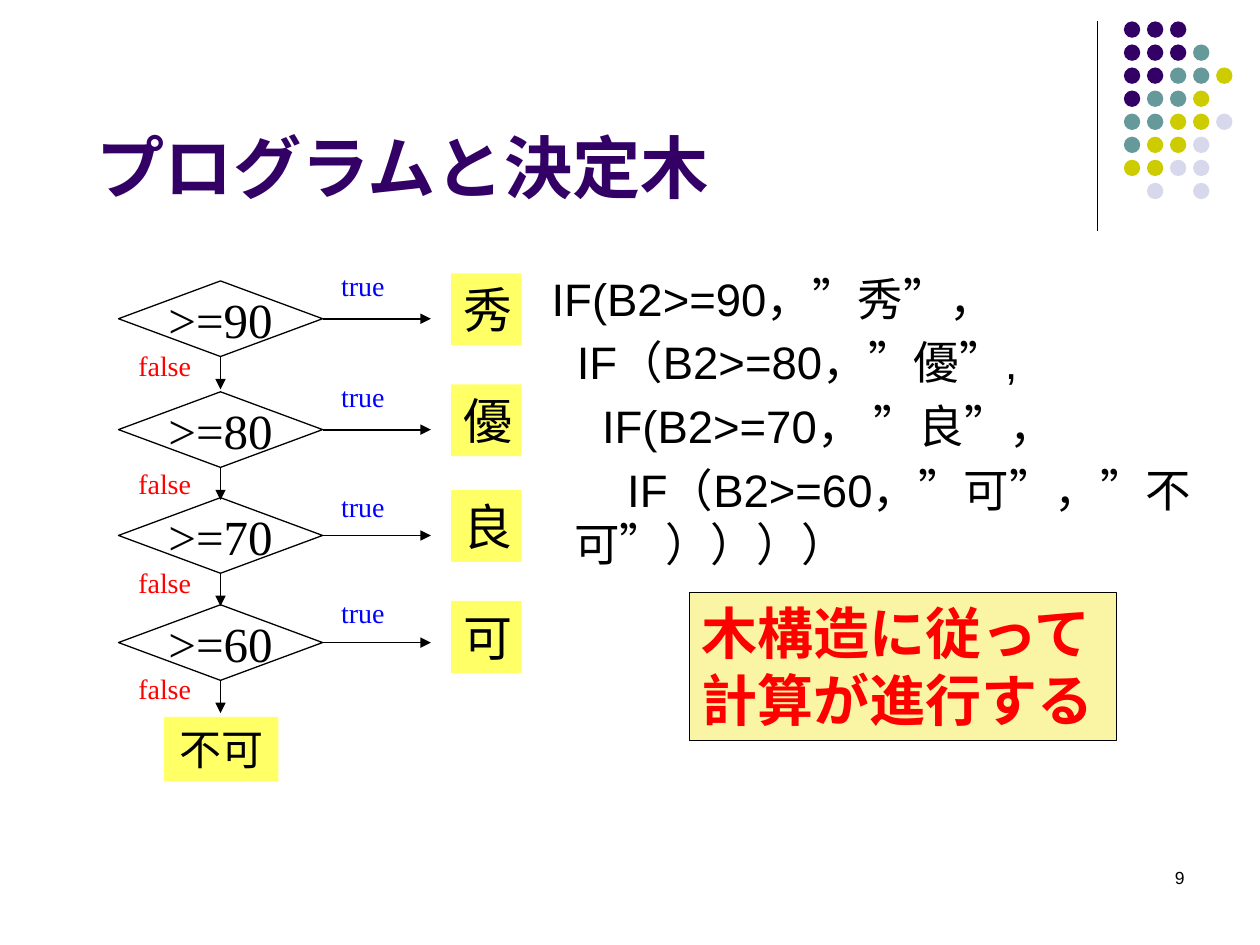
"""Build a slide that sets a grading decision tree beside its nested IF formula."""
from lxml.etree import SubElement
from pptx import Presentation
from pptx.dml.color import RGBColor
from pptx.enum.shapes import MSO_CONNECTOR, MSO_SHAPE as Shape
from pptx.enum.text import MSO_ANCHOR as Anchor, PP_ALIGN as Align
from pptx.oxml.ns import qn
from pptx.util import Inches, Pt

BLACK = RGBColor(0x00, 0x00, 0x00)
RED = RGBColor(0xFF, 0x00, 0x00)
BLUE = RGBColor(0x00, 0x00, 0xFF)
PURPLE = RGBColor(0x33, 0x00, 0x66)
TEAL = RGBColor(0x66, 0x99, 0x99)
OLIVE = RGBColor(0xCC, 0xCC, 0x00)
LAVENDER = RGBColor(0xD8, 0xD8, 0xEC)
YELLOW = RGBColor(0xFF, 0xFF, 0x66)
CREAM = RGBColor(0xF9, 0xF5, 0xA5)

deck = Presentation()
deck.slide_width, deck.slide_height = Inches(10), Inches(7.5)
page = deck.slides.add_slide(deck.slide_layouts[6])


def add_box(text, left, top, width, height, kind=None, fill=None, line=None,
            size=28, font="Times New Roman", color=BLACK, bold=False,
            align=Align.LEFT, anchor=Anchor.TOP, wrap=True, indents=(0,),
            hang=0, before=0):
    area = [Inches(length) for length in (left, top, width, height)]
    if kind is None:
        box = page.shapes.add_textbox(*area)
    else:
        box = page.shapes.add_shape(kind, *area)
        box.shadow.inherit = False
        if fill is None:
            box.fill.background()
        else:
            box.fill.solid()
            box.fill.fore_color.rgb = fill
        if line is None:
            box.line.fill.background()
        else:
            box.line.color.rgb = line
            box.line.width = Pt(0.75)
    if not text:
        return
    frame = box.text_frame
    frame.word_wrap = wrap
    frame.vertical_anchor = anchor
    for index, words in enumerate(text.split("\n")):
        para = frame.paragraphs[0] if index == 0 else frame.add_paragraph()
        para.alignment = align
        para.space_before = Pt(before)
        if hang:
            properties = para._p.get_or_add_pPr()
            properties.set("marL", str(Inches(hang)))
            properties.set("indent", str(Inches(indents[index] - hang)))
        span = para.add_run()
        span.text = words
        span.font.name = font
        span.font.size = Pt(size)
        span.font.bold = bold
        span.font.color.rgb = color


def add_line(x1, y1, x2, y2, width=1.0, arrow=True):
    line = page.shapes.add_connector(
        MSO_CONNECTOR.STRAIGHT, Inches(x1), Inches(y1), Inches(x2), Inches(y2))
    line.line.color.rgb = BLACK
    line.line.width = Pt(width)
    if arrow:
        SubElement(line.line._get_or_add_ln(), qn("a:tailEnd"), type="triangle")
    SubElement(line._element.spPr, qn("a:effectLst"))


add_line(8.71, 0.17, 8.71, 1.83, width=0.75, arrow=False)
DOT_COLORS = {"P": PURPLE, "T": TEAL, "O": OLIVE, "L": LAVENDER}
DOT_ROWS = ["PPP", "PPPT", "PPTTO", "PTTO", "TTOOL", "TOOL", "OOLL", ".L.L"]
DOT_PITCH = 0.183
for row, letters in enumerate(DOT_ROWS):
    for column, letter in enumerate(letters):
        if letter in DOT_COLORS:
            add_box("", 8.92 + column * DOT_PITCH, 0.17 + row * DOT_PITCH,
                    0.13, 0.13, kind=Shape.OVAL, fill=DOT_COLORS[letter])

add_box("9", 7.17, 6.83, 2.33, 0.5, size=10, font="Arial", align=Align.RIGHT)
add_box("プログラムと決定木", 0.67, 0.44, 7.24, 1.25, size=39, font="Arial",
        color=PURPLE, bold=True, anchor=Anchor.BOTTOM)

FORMULA = """IF(B2>=90，”秀”，
IF（B2>=80，”優”,\u3000
IF(B2>=70， ”良”，
IF（B2>=60，”可”，”不可”））））""".replace("\u3000", "")
add_box(FORMULA, 4.08, 2.1, 6.2, 3.93, size=26, font="Arial", hang=0.38,
        indents=(0.2, 0.4, 0.6, 0.8), before=5.2)
add_box("木構造に従って計算が進行する", 5.47, 4.7, 3.39, 1.18,
        kind=Shape.RECTANGLE, fill=CREAM, line=BLACK, size=32, color=RED, bold=True)

STEPS = [
    (">=90", "秀", 2.23, 2.17, 2.08, 2.72),
    (">=80", "優", 3.11, 3.05, 2.96, 3.65),
    (">=70", "良", 3.95, 3.89, 3.84, 4.44),
    (">=60", "可", 4.8, 4.77, 4.68, 5.28),
]
for test, grade, test_top, grade_top, true_top, false_top in STEPS:
    add_box(test, 0.94, test_top, 1.62, 0.6, kind=Shape.FLOWCHART_DECISION,
            line=BLACK, align=Align.CENTER, anchor=Anchor.MIDDLE, wrap=False)
    add_box(grade, 3.58, grade_top, 0.56, 0.57, kind=Shape.RECTANGLE, fill=YELLOW)
    add_box("true", 2.61, true_top, 0.66, 0.37, size=16, color=BLUE)
    add_box("false", 1, false_top, 0.66, 0.37, size=16, color=RED)
    add_line(2.56, test_top + 0.3, 3.42, test_top + 0.3)
    add_line(1.75, test_top + 0.6, 1.75, test_top + 0.86)
add_box("不可", 1.3, 5.69, 0.91, 0.51, kind=Shape.RECTANGLE, fill=YELLOW,
        size=24, align=Align.CENTER)

deck.save("out.pptx")
